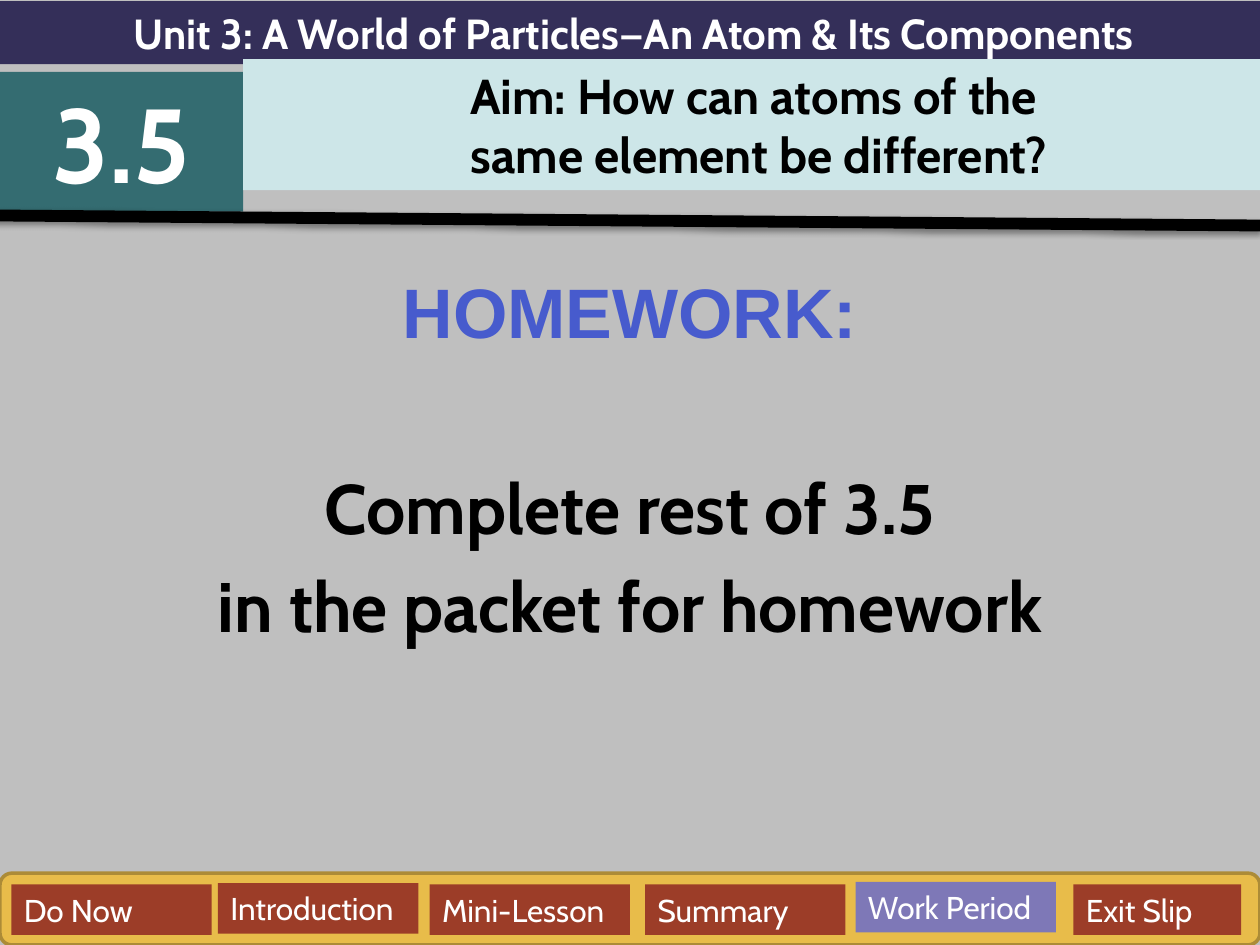
from lxml.etree import SubElement
from pptx import Presentation
from pptx.dml.color import RGBColor
from pptx.enum.shapes import MSO_CONNECTOR as Connector, MSO_SHAPE as Preset
from pptx.enum.text import MSO_ANCHOR as Anchor, PP_ALIGN as Align
from pptx.oxml.ns import qn
from pptx.util import Emu, Inches, Pt


def color(value):
    return RGBColor.from_string(value)


class LessonSlide:
    """Styled drawing on a slide divided into 100 columns and 75 rows."""

    font = "Cabin"
    columns, rows = 100, 75
    white, black = "FFFFFF", "000000"

    def __init__(self, presentation, background):
        self.column = presentation.slide_width / self.columns
        self.row = presentation.slide_height / self.rows
        self.slide = presentation.slides.add_slide(presentation.slide_layouts[6])
        self.slide.background.fill.solid()
        self.slide.background.fill.fore_color.rgb = color(background)
        self.shapes = self.slide.shapes

    def place(self, left, top, width, height):
        return [Emu(round(size)) for size in (left * self.column, top * self.row,
                                              width * self.column, height * self.row)]

    def add_lines(self, frame, lines, size, ink, bold=True, align=Align.CENTER):
        frame.word_wrap = True
        frame.vertical_anchor = Anchor.TOP
        for index, line in enumerate(lines):
            paragraph = frame.add_paragraph() if index else frame.paragraphs[0]
            paragraph.alignment = align
            run = paragraph.add_run()
            run.text = line
            run.font.name, run.font.size, run.font.bold = self.font, Pt(size), bold
            run.font.color.rgb = color(ink)

    def box(self, area, fill, preset=Preset.RECTANGLE, border=None):
        shape = self.shapes.add_shape(preset, *self.place(*area))
        shape.shadow.inherit = False
        shape.fill.solid()
        shape.fill.fore_color.rgb = color(fill)
        if border:
            shape.line.color.rgb = color(border)
            shape.line.width = Pt(2)
        else:
            shape.line.fill.background()
        return shape

    def banner(self, area, fill, lines, size, ink=white):
        self.add_lines(self.box(area, fill).text_frame, lines, size, ink)

    def button(self, left, top, label, width=15.9, fill="9C3D28"):
        shape = self.box((left, top, width, 4), fill)
        self.add_lines(shape.text_frame, [label], 18, self.white, False, Align.LEFT)

    def button_bar(self, area, fill, border, buttons):
        page_shapes = self.shapes
        self.shapes = page_shapes.add_group_shape().shapes
        self.box(area, fill, Preset.ROUNDED_RECTANGLE, border)
        for button in buttons:
            self.button(*button)
        self.shapes = page_shapes

    def rule(self, left, top, right, bottom, width):
        start, end = self.place(left, top, 0, 0)[:2], self.place(right, bottom, 0, 0)[:2]
        line = self.shapes.add_connector(Connector.STRAIGHT, *start, *end)
        line.line.color.rgb = color(self.black)
        line.line.width = Pt(width)
        effects = SubElement(line._element.spPr, qn("a:effectLst"))
        shadow = SubElement(effects, qn("a:outerShdw"), blurRad=str(Pt(3.1)),
                            dist=str(Pt(1.6)), dir="5400000", rotWithShape="0")
        shade = SubElement(shadow, qn("a:srgbClr"), val=self.black)
        SubElement(shade, qn("a:alpha"), val="38000")

    def assignment(self, area, heading, lines, size, heading_ink):
        frame = self.shapes.add_textbox(*self.place(*area)).text_frame
        self.add_lines(frame, [heading, *lines], size, self.black)
        title, first, *others = frame.paragraphs
        title.runs[0].font.name = "Arial"
        title.runs[0].font.color.rgb = color(heading_ink)
        first.space_before = Pt(1.6 * size)
        for paragraph in others:
            paragraph.space_before = Pt(0.2 * size)


def main():
    presentation = Presentation()
    presentation.slide_width, presentation.slide_height = Inches(10), Inches(7.5)
    page = LessonSlide(presentation, "BFBFBF")
    page.assignment((0, 20.8, 100, 54), "HOMEWORK:",
                    ["Complete rest of 3.5", "in the packet for homework"], 40, "475BCD")
    page.banner((0, 0.1, 100.6, 5), "342F59",
                ["Unit 3: A World of Particles—An Atom & Its Components"], 24)
    page.banner((0, 5.7, 19.3, 11.1), "346C71", ["3.5"], 60)
    page.banner((19.3, 4.7, 81, 10.4), "CDE6E8",
                ["Aim: How can atoms of the", " same element be different?"], 28, page.black)
    page.rule(-0.5, 17.1, 100, 17.9, 6.75)
    page.button_bar((0, 69.3, 100, 5.7), "E8BC4A", "AC8B37", [
        (67.9, 70, "Work Period", 15.9, "7E78B7"), (85.2, 70.2, "Exit Slip", 13.3)])
    for left, top, label in [(34.1, 70.2, "Mini-Lesson"), (51.2, 70.2, "Summary"),
                             (17.3, 70.1, "Introduction"), (0.9, 70.2, "Do Now")]:
        page.button(left, top, label)
    presentation.save("out.pptx")


if __name__ == "__main__":
    main()
